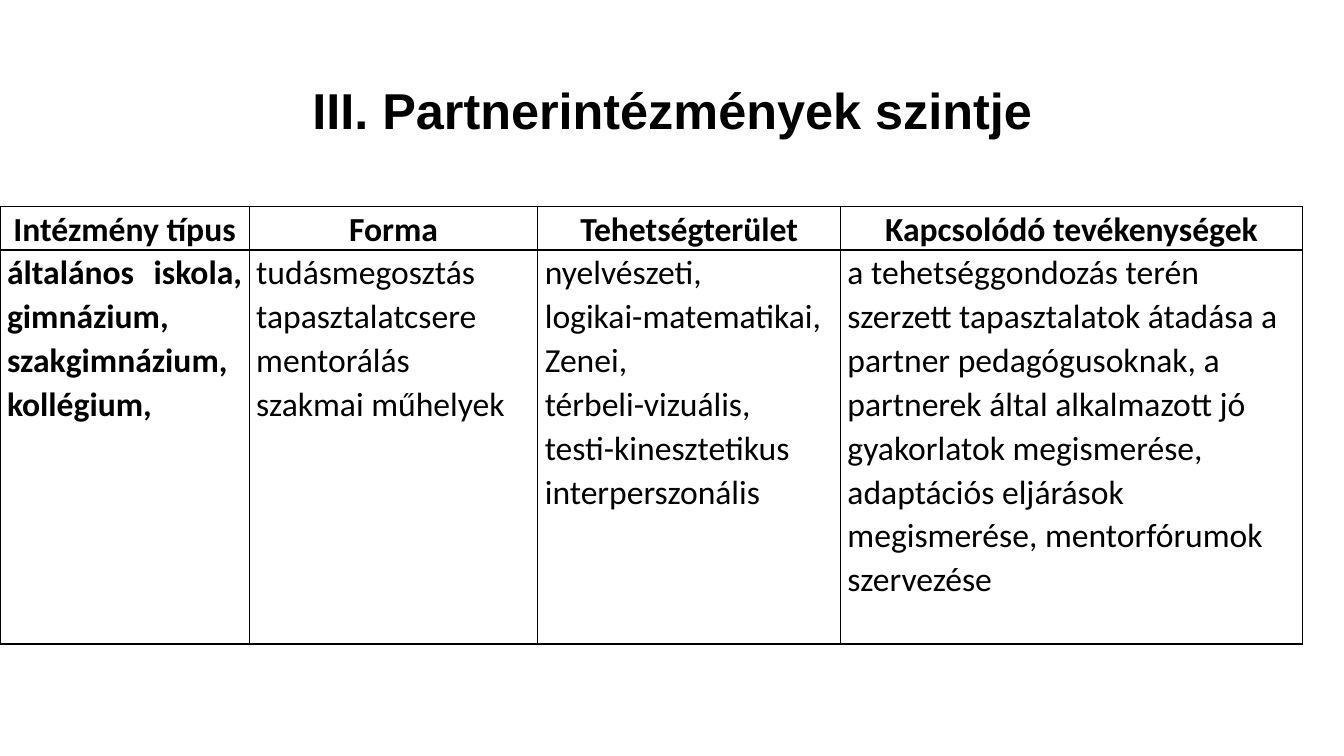
from lxml import etree
from pptx import Presentation
from pptx import util as u
from pptx.dml.color import RGBColor
from pptx.enum import text
from pptx.oxml.ns import qn

COLORS = {"ink": "000000", "paper": "FFFFFF"}
ALIGN = text.PP_ALIGN
TITLE = {"name": "Arial", "size": u.Pt(36), "bold": True}
BOLD = {"name": "Calibri", "size": u.Pt(24), "bold": True}
PLAIN = {**BOLD, "bold": False}

HEADERS = ["Intézmény típus", "Forma", "Tehetségterület", "Kapcsolódó tevékenységek"]
BODY = [
    (["általános iskola, gimnázium, szakgimnázium, kollégium,"], BOLD, ALIGN.JUSTIFY),
    (["tudásmegosztás", "tapasztalatcsere", "mentorálás", "szakmai műhelyek"],
     PLAIN, ALIGN.JUSTIFY),
    (["nyelvészeti,", "logikai-matematikai,", "Zenei,", "térbeli-vizuális,",
      "testi-kinesztetikus", "interperszonális"], PLAIN, ALIGN.JUSTIFY),
    (["a tehetséggondozás terén szerzett tapasztalatok átadása a partner "
      "pedagógusoknak, a partnerek által alkalmazott jó gyakorlatok megismerése, "
      "adaptációs eljárások megismerése, mentorfórumok szervezése"], PLAIN, ALIGN.LEFT),
]
ROWS = [[([h], BOLD, ALIGN.CENTER) for h in HEADERS], BODY]
COL_SHARES = [2.47, 2.86, 3, 4.58]
HEADER_HEIGHT = 0.43


def write(tf, lines, fmt, align, spacing):
    for i, line in enumerate(lines):
        p = tf.add_paragraph() if i else tf.paragraphs[0]
        p.alignment = align
        p.line_spacing = spacing
        r = p.add_run()
        r.text = line
        for key, value in fmt.items():
            setattr(r.font, key, value)
        r.font.color.rgb = RGBColor.from_string(COLORS["ink"])


def add_borders(cell):
    tc_pr = cell._tc.get_or_add_tcPr()
    for i, side in enumerate(("lnL", "lnR", "lnT", "lnB")):
        ln = etree.Element(qn(f"a:{side}"), w=str(u.Pt(1)))
        fill = etree.SubElement(ln, qn("a:solidFill"))
        etree.SubElement(fill, qn("a:srgbClr"), val=COLORS["ink"])
        tc_pr.insert(i, ln)


def add_title(slide, x, y, w, h):
    tf = slide.shapes.add_textbox(*map(u.Inches, (x, y, w, h))).text_frame
    tf.word_wrap = True
    tf.vertical_anchor = text.MSO_ANCHOR.MIDDLE
    write(tf, ["III. Partnerintézmények szintje"], TITLE, ALIGN.CENTER, 0.9)


def add_partner_table(slide, x, y, w, h):
    frame = slide.shapes.add_table(len(ROWS), len(HEADERS), *map(u.Inches, (x, y, w, h)))
    table = frame.table
    for col, share in zip(table.columns, COL_SHARES):
        col.width = u.Inches(w * share / sum(COL_SHARES))
    for row, height in zip(table.rows, (HEADER_HEIGHT, h - HEADER_HEIGHT)):
        row.height = u.Inches(height)
    for row, contents in zip(table.rows, ROWS):
        for cell, (lines, fmt, align) in zip(row.cells, contents):
            cell.margin_left = cell.margin_right = u.Inches(0.07)
            cell.margin_top = cell.margin_bottom = 0
            cell.fill.solid()
            cell.fill.fore_color.rgb = RGBColor.from_string(COLORS["paper"])
            add_borders(cell)
            write(cell.text_frame, lines, fmt, align, 1.07)


def main():
    prs = Presentation()
    prs.slide_width, prs.slide_height = u.Inches(13.33), u.Inches(7.5)
    slide = prs.slides.add_slide(prs.slide_layouts[6])
    add_title(slide, 0.92, 0.4, 11.5, 1.45)
    add_partner_table(slide, 0, 2.05, 12.92, 4.34)
    prs.save("out.pptx")


if __name__ == "__main__":
    main()
